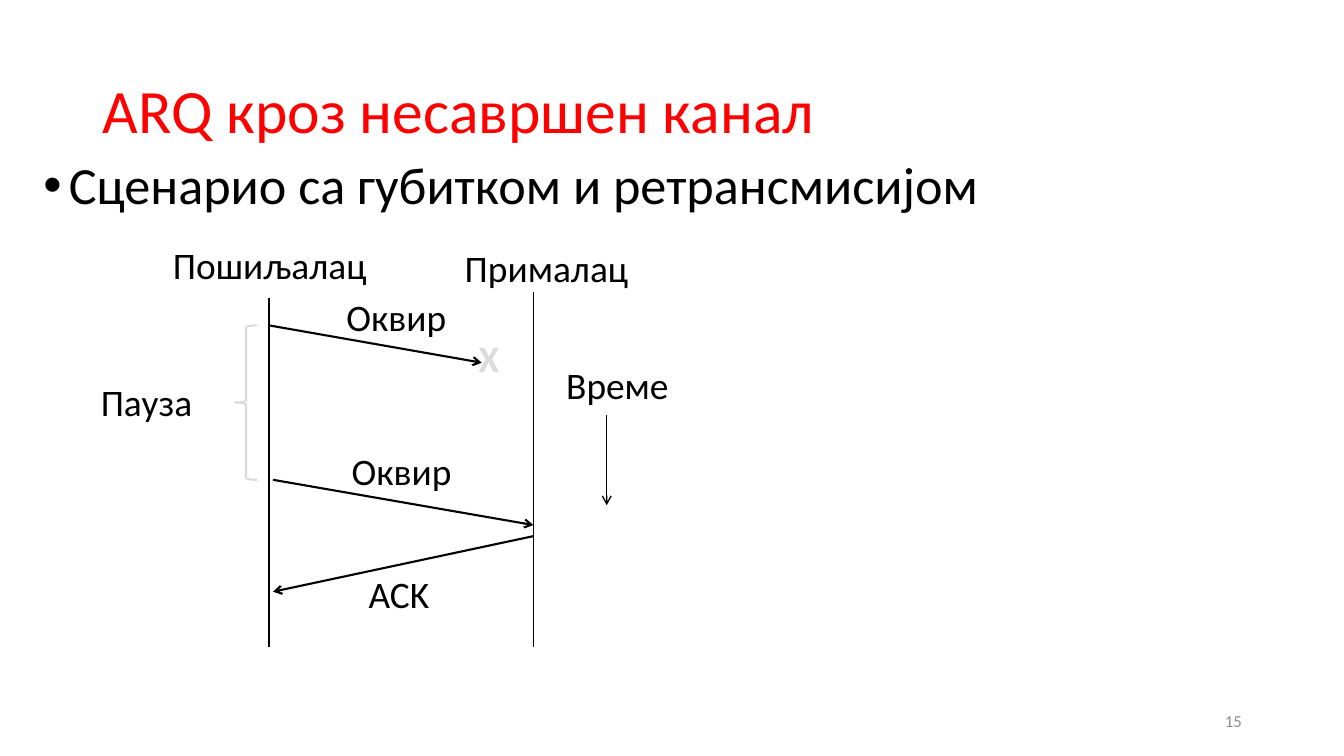
from collections import namedtuple

from lxml.etree import SubElement
from pptx import Presentation
from pptx.dml.color import RGBColor
from pptx.enum.shapes import MSO_CONNECTOR, MSO_SHAPE
from pptx.enum.text import MSO_ANCHOR, MSO_AUTO_SIZE, PP_ALIGN
from pptx.oxml.ns import qn
from pptx.util import Cm, Pt

Box = namedtuple("Box", "left top width height")

COLOURS = {"title": "FF0000", "ink": "000000", "muted": "DBDBDB", "number": "8C8C8C"}
LABEL_HEIGHT = 1.4
SENDER, RECEIVER = 4.49, 11.15
FOOT = 10.34
FIRST_SEND, SECOND_SEND = 2.23, 6.12

LABELS = [
    ("Пошиљалац", 1.82, 0, 5.44),
    ("Прималац", 9.17, 0.08, 4.67),
    ("Оквир", 6.19, 1.32, 3.05),
    ("Пауза", 0, 3.45, 2.84),
    ("Време", 11.73, 3.02, 3.1),
    ("Оквир", 6.32, 5.21, 3.05),
    ("ACK", 6.75, 8.3, 2.06),
]
LIFELINES = [
    (SENDER, 1.55, SENDER, FOOT),
    (RECEIVER, 1.4, RECEIVER, FOOT),
]
MESSAGES = [
    (SENDER, FIRST_SEND, 9.85, 3.17),
    (SENDER + 0.1, SECOND_SEND, RECEIVER, 7.26),
    (RECEIVER, 7.54, SENDER + 0.1, 8.94),
]
TIME_ARROW = (13, 4.49, 13, 6.76)


def colour(name):
    """Return the named colour."""
    return RGBColor.from_string(COLOURS[name])


def place(shape, box):
    """Move a shape to a box given in centimetres."""
    for side, length in box._asdict().items():
        setattr(shape, side, Cm(length))


def write(shape, text, size, ink, frame_format, para_format, bold=False):
    """Write one formatted paragraph into a shape."""
    frame = shape.text_frame
    para = frame.paragraphs[0]
    span = para.add_run()
    span.text = text
    span.font.color.rgb = colour(ink)
    span_format = {"name": "Calibri", "size": Pt(size), "bold": bold}
    for target, values in ((frame, frame_format), (para, para_format), (span.font, span_format)):
        for name, value in values.items():
            setattr(target, name, value)
    return para


def add_title(page, box):
    """Fill the title placeholder."""
    title = page.shapes.title
    place(title, box)
    write(title, "ARQ кроз несавршен канал", 44, "title",
          {"vertical_anchor": MSO_ANCHOR.MIDDLE, "auto_size": MSO_AUTO_SIZE.NONE, "word_wrap": True},
          {"alignment": PP_ALIGN.LEFT, "line_spacing": 0.9})


def add_body(page, box):
    """Fill the body placeholder with its bullet."""
    body = page.placeholders[1]
    place(body, box)
    para = write(body, "Сценарио са губитком и ретрансмисијом", 37.3, "ink",
                 {"auto_size": MSO_AUTO_SIZE.NONE, "word_wrap": True},
                 {"line_spacing": 0.9, "space_before": Pt(10)})
    properties = para._p.get_or_add_pPr()
    properties.set("marL", str(Cm(0.64)))
    properties.set("indent", str(Cm(-0.64)))
    SubElement(properties, qn("a:buFont"), typeface="Arial")
    SubElement(properties, qn("a:buChar"), char="•")


def add_label(page, box, text, ink="ink", bold=False):
    """Add a diagram label that does not wrap."""
    label = page.shapes.add_textbox(*map(Cm, box))
    write(label, text, 26.7, ink,
          {"word_wrap": False, "auto_size": MSO_AUTO_SIZE.SHAPE_TO_FIT_TEXT},
          {"alignment": PP_ALIGN.LEFT}, bold)


def add_line(page, box, ends, width, arrow=False):
    """Draw a straight line between two points of the box."""
    x1, y1, x2, y2 = ends
    line = page.shapes.add_connector(
        MSO_CONNECTOR.STRAIGHT,
        Cm(box.left + x1), Cm(box.top + y1), Cm(box.left + x2), Cm(box.top + y2))
    line.line.color.rgb = colour("ink")
    line.line.width = Pt(width)
    if arrow:
        SubElement(line.line._get_or_add_ln(), qn("a:tailEnd"), type="arrow")
    SubElement(line._element.spPr, qn("a:effectLst"))


def add_brace(page, box):
    """Draw the brace that spans the pause."""
    brace = page.shapes.add_shape(MSO_SHAPE.LEFT_BRACE, *map(Cm, box))
    brace.shadow.inherit = False
    brace.fill.background()
    brace.line.color.rgb = colour("muted")
    brace.line.width = Pt(1.5)


def add_diagram(page, box):
    """Draw the message sequence between sender and receiver."""
    for ends in LIFELINES:
        add_line(page, box, ends, 1)
    for ends in MESSAGES:
        add_line(page, box, ends, 1.5, arrow=True)
    add_line(page, box, TIME_ARROW, 1, arrow=True)
    add_brace(page, Box(box.left + 3.63, box.top + FIRST_SEND, 0.56, SECOND_SEND - FIRST_SEND))
    for text, left, top, width in LABELS:
        add_label(page, Box(box.left + left, box.top + top, width, LABEL_HEIGHT), text)
    add_label(page, Box(box.left + 9.52, box.top + 2.36, 1.04, LABEL_HEIGHT), "X", "muted", True)


def add_page_number(page, box):
    """Add the page number at the lower right."""
    number = page.shapes.add_textbox(*map(Cm, box))
    write(number, "15", 12, "number",
          {"word_wrap": True, "vertical_anchor": MSO_ANCHOR.MIDDLE},
          {"alignment": PP_ALIGN.RIGHT})


def main():
    """Build and save the deck."""
    deck = Presentation()
    deck.slide_width, deck.slide_height = Cm(33.87), Cm(19.05)
    page = deck.slides.add_slide(deck.slide_layouts[1])
    add_title(page, Box(2.34, 1.02, 29.21, 3.68))
    add_body(page, Box(0.84, 3.89, 28.6, 13.26))
    add_diagram(page, Box(2.29, 5.97, 14.83, FOOT))
    add_page_number(page, Box(23.93, 17.65, 7.62, 1.02))
    deck.save("out.pptx")


if __name__ == "__main__":
    main()
